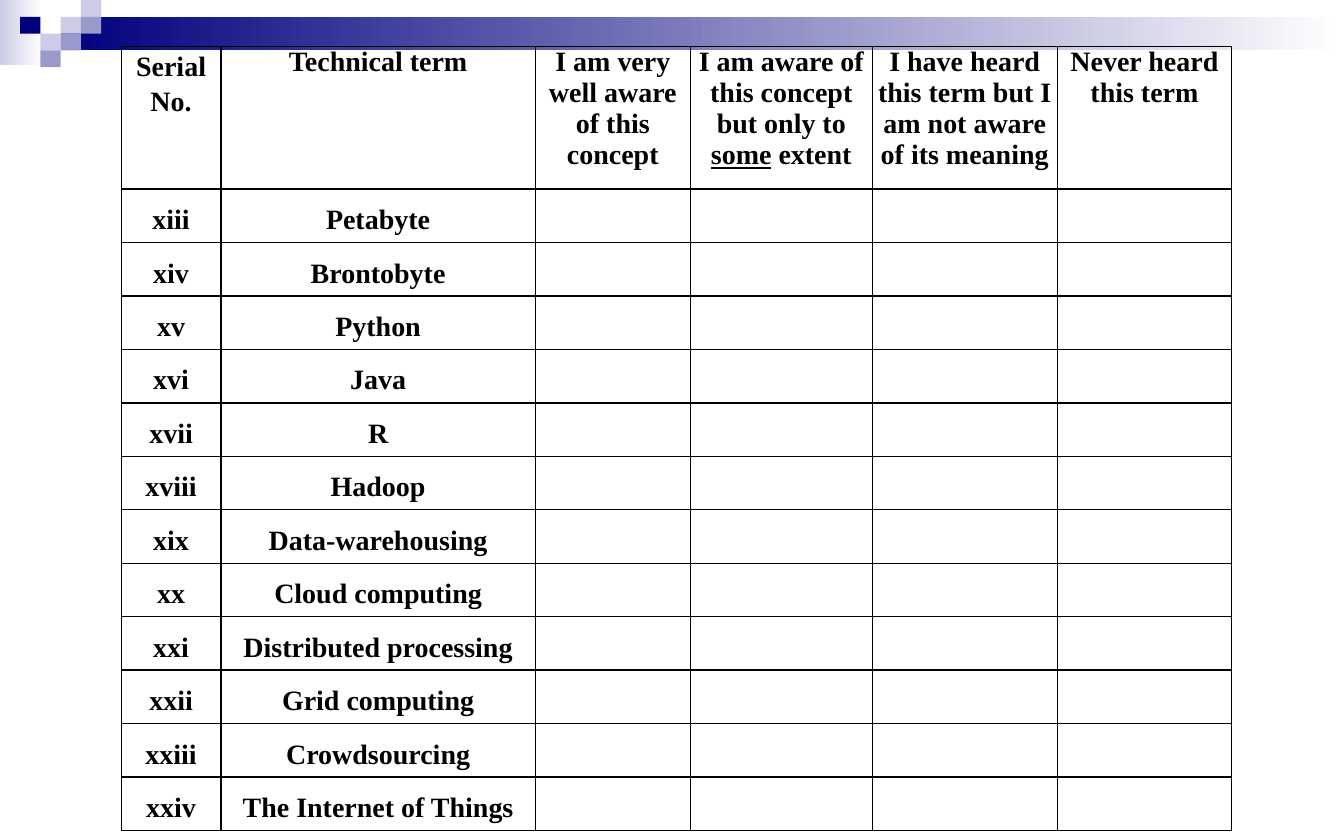
import pptx
import pptx.dml.color
import pptx.enum.text
import pptx.oxml
import pptx.oxml.ns
import pptx.util
from dataclasses import dataclass
from pptx.enum.shapes import MSO_SHAPE

Pt = pptx.util.Pt


@dataclass(frozen=True)
class Theme:
    navy: str = "00007D"
    lilac: str = "9999CC"
    pale: str = "CCCCE6"
    white: str = "FFFFFF"
    ink: str = "000000"
    font: str = "Times New Roman"
    text_size: float = 18
    border: float = 1


def rgb(value):
    return pptx.dml.color.RGBColor.from_string(value)


class SlideBuilder:
    def __init__(self, slide, theme):
        self.slide = slide
        self.theme = theme

    def block(self, left, top, width, height, *colours):
        block = self.slide.shapes.add_shape(
            MSO_SHAPE.RECTANGLE, Pt(left), Pt(top), Pt(width), Pt(height))
        block.shadow.inherit = False
        block.line.fill.background()
        if len(colours) == 1:
            block.fill.solid()
            block.fill.fore_color.rgb = rgb(colours[0])
        else:
            block.fill.gradient()
            block.fill.gradient_angle = 0
            for stop, colour in zip(block.fill.gradient_stops, colours):
                stop.color.rgb = rgb(colour)

    def cell(self, cell, runs, line_spacing):
        cell.margin_left = cell.margin_right = Pt(3.6)
        cell.margin_top = cell.margin_bottom = 0
        properties = cell._tc.get_or_add_tcPr()
        for side in ("lnL", "lnR", "lnT", "lnB"):
            properties.append(pptx.oxml.parse_xml(
                f'<a:{side} {pptx.oxml.ns.nsdecls("a")} w="{Pt(self.theme.border)}">'
                f'<a:solidFill><a:srgbClr val="{self.theme.ink}"/></a:solidFill></a:{side}>'))
        cell.fill.background()
        paragraph = cell.text_frame.paragraphs[0]
        paragraph.alignment = pptx.enum.text.PP_ALIGN.CENTER
        paragraph.line_spacing = line_spacing
        paragraph.font.name = self.theme.font
        paragraph.font.size = Pt(self.theme.text_size)
        paragraph.font.bold = True
        paragraph.font.color.rgb = rgb(self.theme.ink)
        for text, underlined in runs:
            run = paragraph.add_run()
            run.text = text
            if underlined:
                run.font.underline = True

    def table(self, left, top, widths, heights, rows, spacings):
        table = self.slide.shapes.add_table(
            len(heights), len(widths), Pt(left), Pt(top),
            Pt(sum(widths)), Pt(sum(heights))).table
        table.first_row = table.horz_banding = False
        for column, width in zip(table.columns, widths):
            column.width = Pt(width)
        for row, height, contents, row_spacings in zip(table.rows, heights, rows, spacings):
            row.height = Pt(height)
            for cell, runs, spacing in zip(row.cells, contents, row_spacings):
                self.cell(cell, runs, spacing)


def plain(text):
    return [(text, False)] if text else []


HEADINGS = [
    plain("Serial No."),
    plain("Technical term"),
    plain("I am very well aware of this concept"),
    [("I am aware of this concept but only to ", False), ("some", True), (" extent", False)],
    plain("I have heard this term but I am not aware of its meaning"),
    plain("Never heard this term"),
]
TERMS = {
    "xiii": "Petabyte",
    "xiv": "Brontobyte",
    "xv": "Python",
    "xvi": "Java",
    "xvii": "R",
    "xviii": "Hadoop",
    "xix": "Data-warehousing",
    "xx": "Cloud computing",
    "xxi": "Distributed processing",
    "xxii": "Grid computing",
    "xxiii": "Crowdsourcing",
    "xxiv": "The Internet of Things",
}
COLUMN_WIDTHS = [64, 202.2, 99.6, 117, 118.9, 112.2]
HEADER_HEIGHT, TERM_HEIGHT = 91.6, 34.36
TILE_WIDTH, TILE_HEIGHT = 13, 10.8


def main():
    theme = Theme()
    deck = pptx.Presentation()
    deck.slide_width, deck.slide_height = Pt(864), Pt(540)
    builder = SlideBuilder(deck.slides.add_slide(deck.slide_layouts[6]), theme)

    builder.block(0, 0, 27, 41.8, theme.pale, theme.white)
    builder.block(39, TILE_HEIGHT, 825, 2 * TILE_HEIGHT, theme.navy, theme.white)
    tiles = [
        (3, 1, theme.pale), (4, 0, theme.pale), (4, 1, theme.lilac), (2, 2, theme.pale),
        (1, 1, theme.navy), (3, 2, theme.lilac), (2, 3, theme.lilac),
    ]
    for column, row, colour in tiles:
        builder.block(column * TILE_WIDTH, row * TILE_HEIGHT, TILE_WIDTH, TILE_HEIGHT, colour)

    term_rows = [[plain(serial), plain(term)] + [[]] * 4 for serial, term in TERMS.items()]
    builder.table(
        78, 30, COLUMN_WIDTHS,
        [HEADER_HEIGHT] + [TERM_HEIGHT] * len(TERMS),
        [HEADINGS] + term_rows,
        [[1.15] + [1.0] * 5] + [[1.5, 1.5] + [1.0] * 4] * len(TERMS))
    deck.save("out.pptx")


if __name__ == "__main__":
    main()
